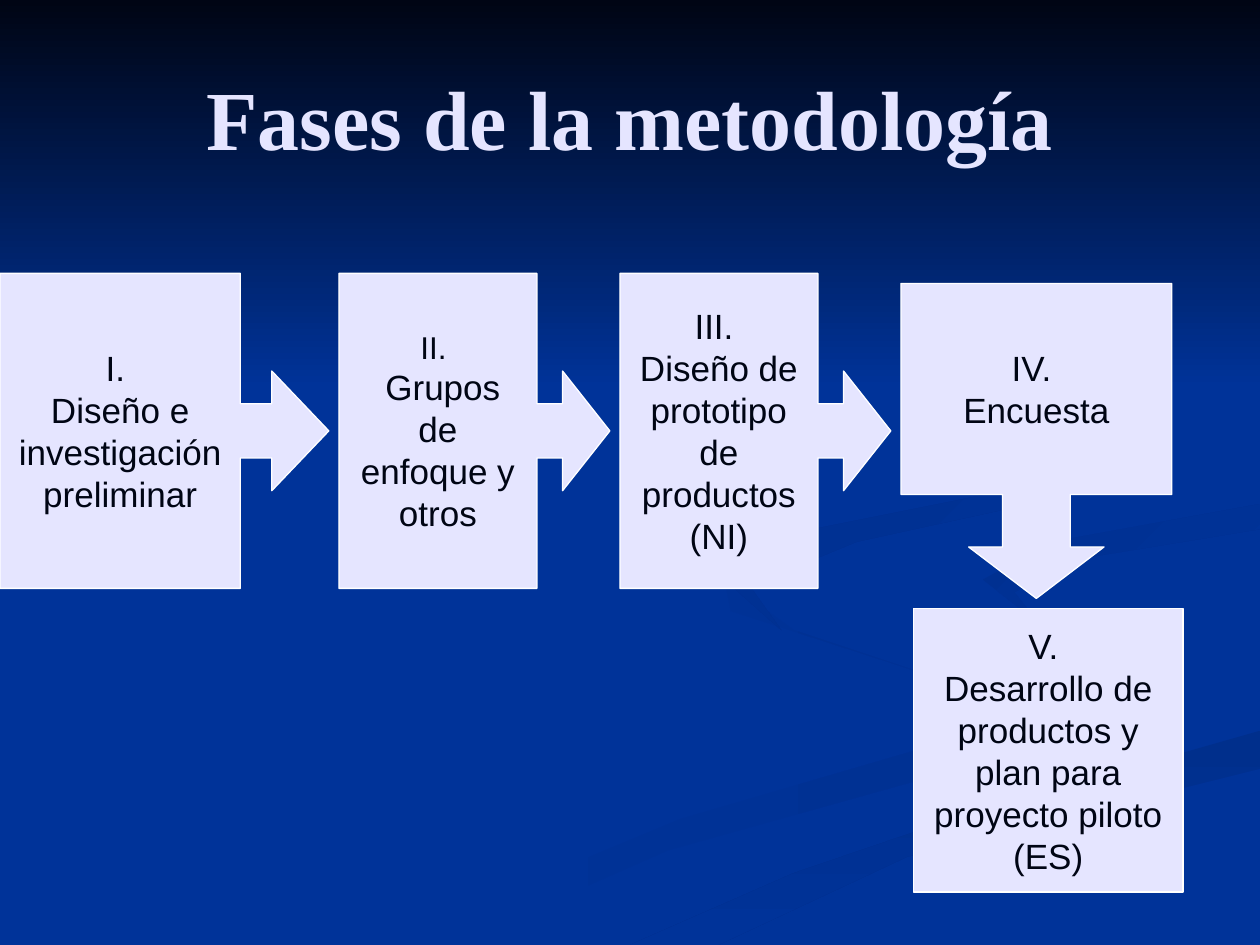
import pptx
import pptx.util
import pptx.dml.color
import pptx.enum.shapes
import pptx.enum.text

Inches = pptx.util.Inches
SHAPE = pptx.enum.shapes.MSO_SHAPE
NAVY, BLUE, LILAC, WHITE = "000514", "003399", "E5E5FF", "FFFFFF"

# Swooshes: first colour, last colour, clockwise angle, outline in inches
SWOOSHES = [
    (BLUE, "003193", 0, [
        (7.8, 5.5), (6.3, 5), (5.75, 4.6), (5.8, 4.85), (7.5, 5.4),
        (7.8, 5.8), (5.4, 6.5), (3, 7.5), (3.6, 7.5), (5.3, 6.75),
        (7.8, 6.05), (8, 5.8)]),
    ("002F8C", BLUE, 90, [
        (5, 7.5), (5.7, 7.5), (7.2, 6.8), (10, 6.1), (10, 5.8),
        (7.65, 6.47), (6.3, 6.93)]),
    ("003091", BLUE, 45, [
        (7.8, 4.6), (8.25, 4.95), (8.05, 4.7), (8.6, 4.43), (10, 4.2),
        (10, 4), (8.35, 4.3)]),
    ("002F8E", BLUE, 45, [
        (6.8, 4.3), (8.4, 3.95), (8.95, 3.4), (8.5, 2.8), (7.6, 2.35),
        (8.9, 3.3), (8.2, 3.85), (6.2, 4.25), (5.75, 4.6), (6.2, 5),
        (5.95, 4.65)]),
]

# Row of phases joined by arrows to the right
ROW = [
    "I. \nDiseño e investigación preliminar",
    "II. \n Grupos de enfoque y otros",
    "III. \nDiseño de prototipo\vde productos\n(NI)",
]
ROW_TOP, ROW_HEIGHT = 2.17, 2.5
FIRST_WIDTH, PHASE_WIDTH, GAP = 2.61, 2.15, 0.08


def rgb(color):
    return pptx.dml.color.RGBColor.from_string(color)


def style_text(p, font, size, color, bold=False):
    p.alignment = pptx.enum.text.PP_ALIGN.CENTER
    for r in p.runs:
        r.font.name, r.font.size, r.font.bold = font, pptx.util.Pt(size), bold
        r.font.color.rgb = rgb(color)


def fill_gradient(sp, first, last, angle):
    sp.shadow.inherit = False
    sp.line.fill.background()
    sp.fill.gradient()
    sp.fill.gradient_angle = (360 - angle) % 360
    for stop, color, position in zip(sp.fill.gradient_stops, (first, last), (0, 1)):
        stop.color.rgb = rgb(color)
        stop.position = position


def add_background(s, width, band_height):
    s.background.fill.solid()
    s.background.fill.fore_color.rgb = rgb(BLUE)
    for first, last, angle, outline in SWOOSHES:
        points = [(Inches(x), Inches(y)) for x, y in outline]
        builder = s.shapes.build_freeform(*points[0])
        builder.add_line_segments(points[1:], close=True)
        fill_gradient(builder.convert_to_shape(), first, last, angle)
    band = s.shapes.add_shape(SHAPE.RECTANGLE, 0, 0, width, band_height)
    fill_gradient(band, NAVY, BLUE, 90)


def add_title(s, box, text):
    title = s.shapes.title
    title.left, title.top, title.width, title.height = map(Inches, box)
    title.text_frame.text = text
    title.text_frame.vertical_anchor = pptx.enum.text.MSO_ANCHOR.MIDDLE
    style_text(title.text_frame.paragraphs[0], "Times New Roman", 48, LILAC, True)
    # Bring the title in front of the background
    title._element.getparent().append(title._element)


def add_phase(s, shape, box, adjustments, text):
    sp = s.shapes.add_shape(shape, *map(Inches, box))
    sp.shadow.inherit = False
    for i, value in enumerate(adjustments):
        sp.adjustments[i] = value
    sp.fill.solid()
    sp.fill.fore_color.rgb = rgb(LILAC)
    sp.line.color.rgb = rgb(WHITE)
    sp.line.width = pptx.util.Pt(0.75)
    tf = sp.text_frame
    tf.word_wrap = True
    tf.vertical_anchor = pptx.enum.text.MSO_ANCHOR.MIDDLE
    tf.text = text
    for p in tf.paragraphs:
        style_text(p, "Arial", 18 if p.text == "II. " else 20, NAVY)


def add_row(s, left, top, height):
    for i, text in enumerate(ROW):
        width = PHASE_WIDTH if i else FIRST_WIDTH
        # Arrow size is relative to the shorter side of the callout
        side = min(width, height)
        adjustments = (0.43 / side, 0.475 / side, 0.375 / side if i else 0.181, 0.731)
        add_phase(s, SHAPE.RIGHT_ARROW_CALLOUT, (left, top, width, height),
                  adjustments, text)
        left += width + GAP


def main():
    prs = pptx.Presentation()
    prs.slide_width, prs.slide_height = Inches(10), Inches(7.5)
    s = prs.slides.add_slide(prs.slide_layouts[5])
    add_background(s, prs.slide_width, Inches(3.08))
    add_title(s, (0.5, 0.3, 9, 1.25), "Fases de la metodología")
    add_row(s, 0, ROW_TOP, ROW_HEIGHT)
    # Last two phases, one above the other
    add_phase(s, SHAPE.DOWN_ARROW_CALLOUT, (7.15, 2.25, PHASE_WIDTH, ROW_HEIGHT),
              (0.25, 0.25, 0.19, 0.67), "IV. \nEncuesta")
    add_phase(s, SHAPE.RECTANGLE, (7.25, 4.83, 2.14, 2.25), (),
              "V. \nDesarrollo de productos y plan para proyecto piloto (ES)")
    prs.save("out.pptx")


if __name__ == "__main__":
    main()
